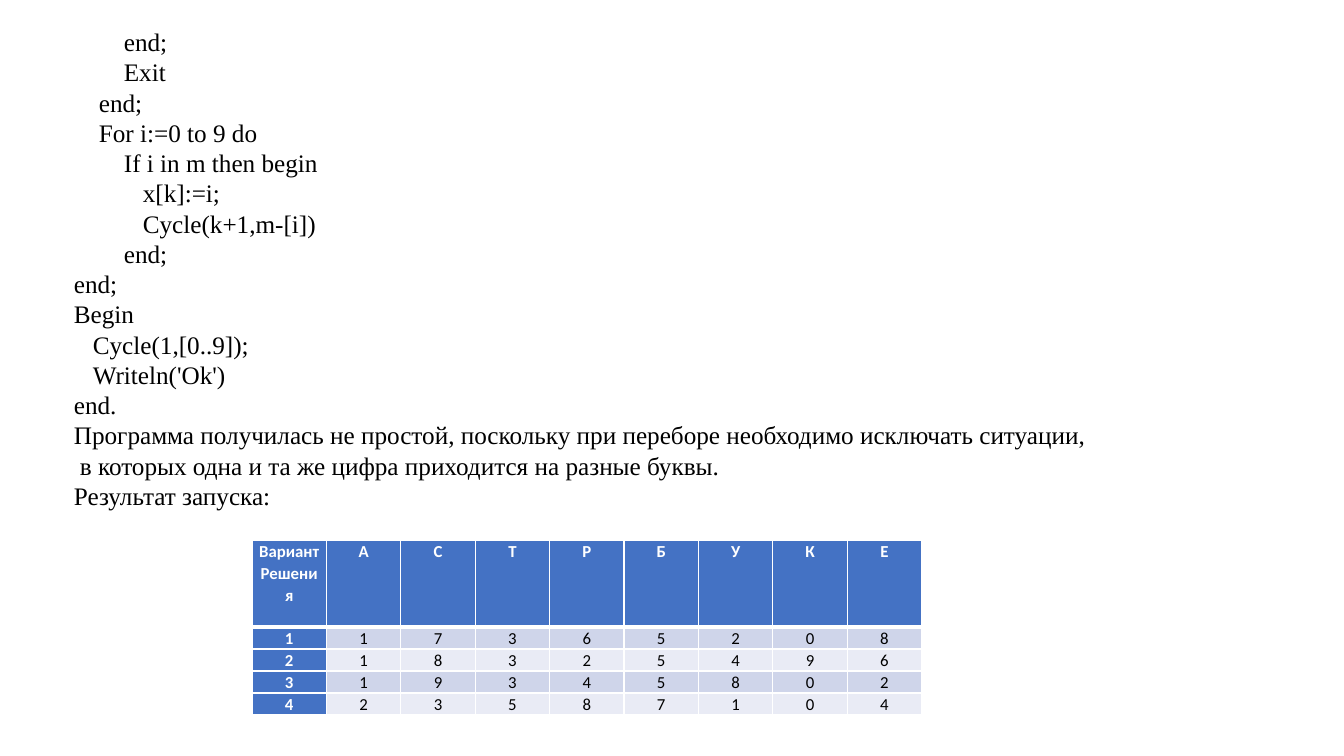
import lxml.etree
import pptx
import pptx.dml.color
import pptx.enum.text
import pptx.oxml.ns
import pptx.util

RGBColor = pptx.dml.color.RGBColor
BLACK = RGBColor(0x00, 0x00, 0x00)
WHITE = RGBColor(0xFF, 0xFF, 0xFF)
BLUE = RGBColor(0x44, 0x72, 0xC4)
BANDS = [RGBColor(0xCF, 0xD5, 0xEA), RGBColor(0xE9, 0xEB, 0xF5)]

SLIDE_WIDTH, SLIDE_HEIGHT = 1344, 756
EMU_PER_PX = 12192000 / SLIDE_WIDTH

PROGRAM = [
    (50, "end;"),
    (50, "Exit"),
    (25, "end;"),
    (25, "For i:=0 to 9 do"),
    (50, "If i in m then begin"),
    (69, "x[k]:=i;"),
    (69, "Cycle(k+1,m-[i])"),
    (50, "end;"),
    (0, "end;"),
    (0, "Begin"),
    (19, "Cycle(1,[0..9]);"),
    (19, "Writeln('Ok')"),
    (0, "end."),
    (0, "Программа получилась не простой, поскольку при переборе необходимо исключать ситуации,"),
    (6, "в которых одна и та же цифра приходится на разные буквы."),
    (0, "Результат запуска:"),
]
SOLUTIONS = [
    ["Вариант\nРешения", *"АСТРБУКЕ"],
    [*"117365208"],
    [*"218325496"],
    [*"319345802"],
    [*"423587104"],
]


def px(length):
    return pptx.util.Emu(round(length * EMU_PER_PX))


class SlideBuilder:
    body_font, body_size = "Times New Roman", 18
    table_font, table_size = "Calibri", 12
    first_line_indent = 49
    cell_margin = 7
    line_spacing = 1.07

    def __init__(self, deck):
        self.slide = deck.slides.add_slide(deck.slide_layouts[6])

    def format_runs(self, para, name, size, color, bold=False):
        for span in para.runs:
            span.font.name = name
            span.font.size = pptx.util.Pt(size)
            span.font.bold = bold
            span.font.color.rgb = color

    def add_program(self, left, top, width, height, lines):
        box = self.slide.shapes.add_textbox(px(left), px(top), px(width), px(height))
        frame = box.text_frame
        frame.word_wrap = True
        frame.auto_size = pptx.enum.text.MSO_AUTO_SIZE.SHAPE_TO_FIT_TEXT
        frame.vertical_anchor = pptx.enum.text.MSO_ANCHOR.MIDDLE
        frame.text = "\n".join(text for _, text in lines)
        for para, (indent, _) in zip(frame.paragraphs, lines):
            properties = para._p.get_or_add_pPr()
            properties.set("indent", str(px(self.first_line_indent + indent)))
            self.format_runs(para, self.body_font, self.body_size, BLACK)

    def add_borders(self, cell, widths):
        properties = cell._tc.get_or_add_tcPr()
        qn = pptx.oxml.ns.qn
        for side, width in widths.items():
            line = lxml.etree.SubElement(properties, qn("a:ln" + side), w=str(pptx.util.Pt(width)))
            fill = lxml.etree.SubElement(line, qn("a:solidFill"))
            lxml.etree.SubElement(fill, qn("a:srgbClr"), val=str(WHITE))

    def format_cell(self, cell, text, row, column):
        is_heading = row == 0 or column == 0
        self.add_borders(cell, {"L": 1, "R": 1, "T": 3 if row == 1 else 1, "B": 3 if row == 0 else 1})
        cell.fill.solid()
        cell.fill.fore_color.rgb = BLUE if is_heading else BANDS[(row - 1) % 2]
        cell.margin_left = cell.margin_right = px(self.cell_margin)
        cell.margin_top = cell.margin_bottom = 0
        cell.text_frame.text = text
        for para in cell.text_frame.paragraphs:
            para.alignment = pptx.enum.text.PP_ALIGN.CENTER
            para.line_spacing = self.line_spacing
            color = WHITE if is_heading else BLACK
            self.format_runs(para, self.table_font, self.table_size, color, is_heading)

    def add_table(self, left, top, width, header_height, row_height, rows):
        height = header_height + row_height * (len(rows) - 1)
        frame = self.slide.shapes.add_table(
            len(rows), len(rows[0]), px(left), px(top), px(width), px(height))
        table = frame.table
        for column in table.columns:
            column.width = px(width / len(rows[0]))
        for row, values in enumerate(rows):
            table.rows[row].height = px(row_height if row else header_height)
            for column, text in enumerate(values):
                self.format_cell(table.cell(row, column), text, row, column)


def main():
    deck = pptx.Presentation()
    deck.slide_width, deck.slide_height = px(SLIDE_WIDTH), px(SLIDE_HEIGHT)
    page = SlideBuilder(deck)
    page.add_table(252, 540, 670, 87, 22, SOLUTIONS)
    page.add_program(15, 19, 1293, 499, PROGRAM)
    deck.save("out.pptx")


if __name__ == "__main__":
    main()
